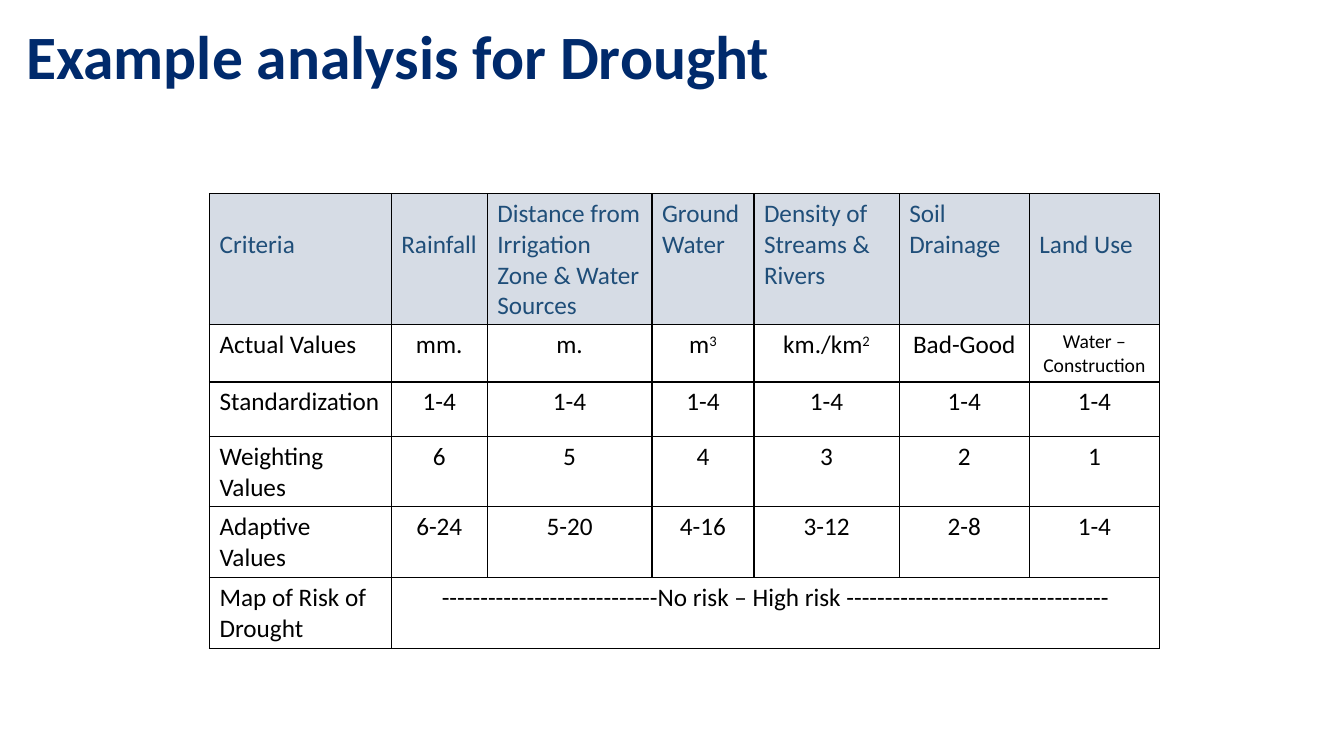
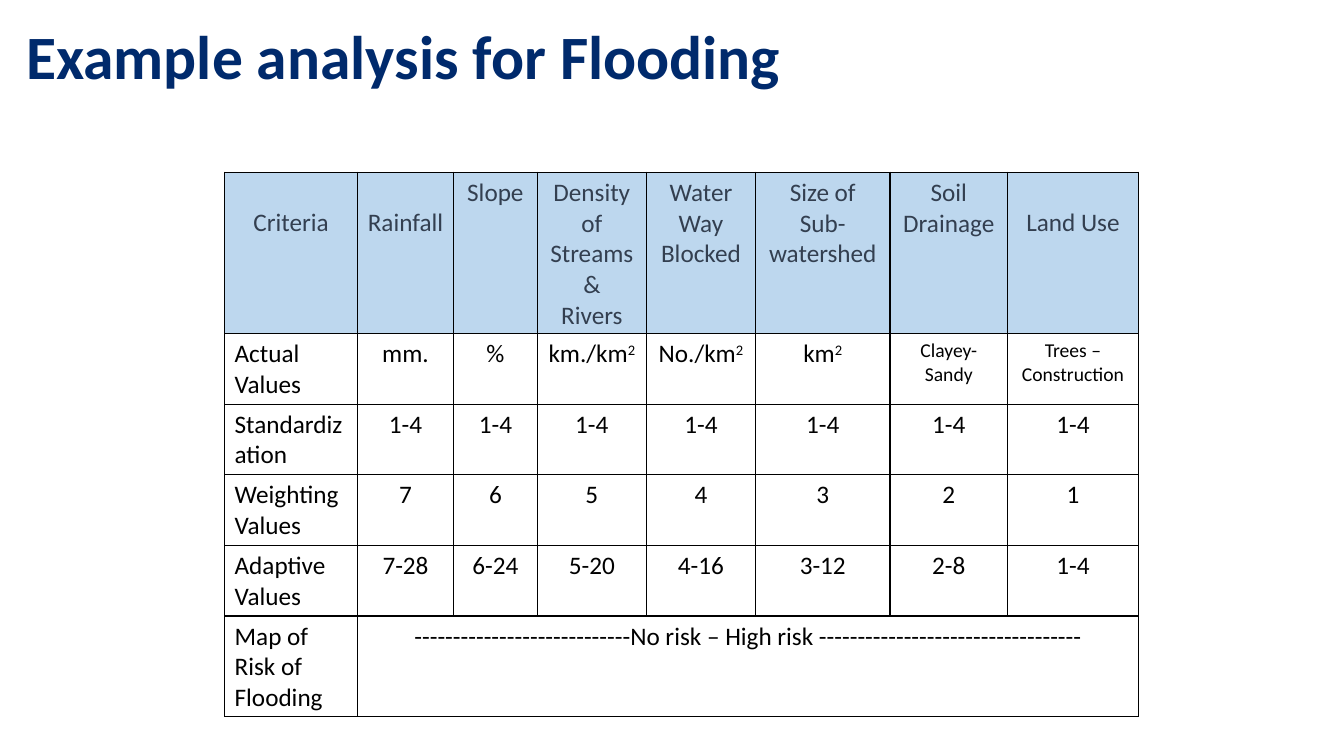
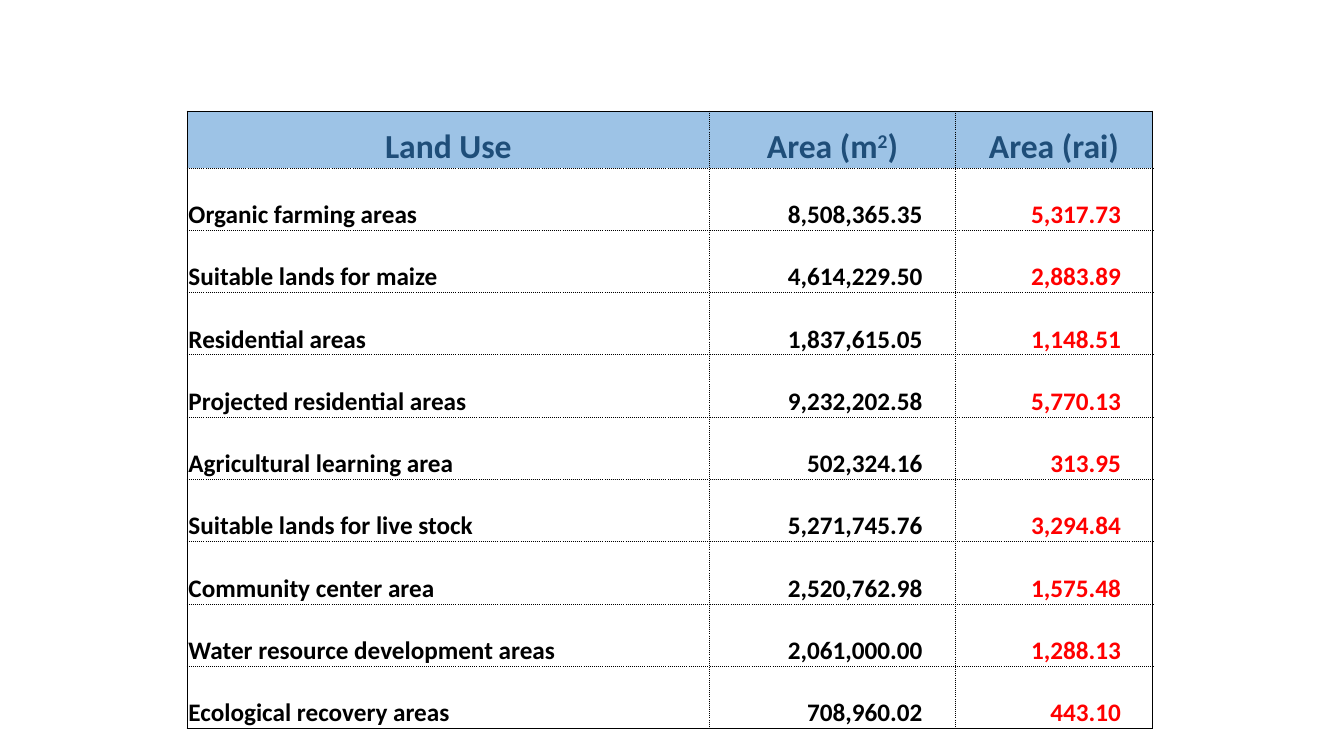
import pptx
import pptx.dml.color
import pptx.enum.text
import pptx.oxml
import pptx.oxml.ns
import pptx.util
from pptx.util import Cm

LEFT = pptx.enum.text.PP_ALIGN.LEFT
CENTER = pptx.enum.text.PP_ALIGN.CENTER
RIGHT = pptx.enum.text.PP_ALIGN.RIGHT
MIDDLE = pptx.enum.text.MSO_ANCHOR.MIDDLE
BOTTOM = pptx.enum.text.MSO_ANCHOR.BOTTOM

FONT = "Calibri"
NAVY, BLUE, SLATE = "002A6C", "1F4E79", "333F50"
BLACK, RED = "000000", "FF0000"
ONE_LINE_DOWN = Cm(0.9)
SOLID, DOTTED = (1, "solid"), (0.5, "dot")
RISK_SCALE = "-" * 28 + "No risk – High risk " + "-" * 34


def color(value):
    return pptx.dml.color.RGBColor.from_string(value)


def set_values(target, values):
    for name, value in values.items():
        setattr(target, name, value)


class Deck:
    def __init__(self):
        self.presentation = pptx.Presentation()
        self.presentation.slide_width = Cm(33.87)
        self.presentation.slide_height = Cm(19.05)
        self.slide = None

    def add_slide(self):
        self.slide = self.presentation.slides.add_slide(self.presentation.slide_layouts[6])

    def add_text(self, text_frame, text, size, text_color, bold=False, align=LEFT, spacing=None):
        """Add one paragraph a line; the character after ^ is raised."""
        for index, line in enumerate(text.split("\n")):
            paragraph = text_frame.paragraphs[0] if index == 0 else text_frame.add_paragraph()
            set_values(paragraph, {"alignment": align, "line_spacing": spacing})
            base, _, rest = line.partition("^")
            for part, raised in ((base, False), (rest[:1], True), (rest[1:], False)):
                if not part:
                    continue
                run = paragraph.add_run()
                run.text = part
                set_values(run.font, {"name": FONT, "size": pptx.util.Pt(size), "bold": bold})
                run.font.color.rgb = color(text_color)
                if raised:
                    run._r.get_or_add_rPr().set("baseline", "30000")

    def title(self, text):
        text_frame = self.slide.shapes.add_textbox(Cm(0.41), 0, Cm(32.99), Cm(3)).text_frame
        set_values(text_frame, {"word_wrap": True, "vertical_anchor": MIDDLE})
        self.add_text(text_frame, text, 44, NAVY, bold=True, spacing=0.9)

    def border(self, cell, side, line):
        width, dash = line
        cell._tc.get_or_add_tcPr().append(pptx.oxml.parse_xml(
            f'<a:ln{side} {pptx.oxml.ns.nsdecls("a")} w="{pptx.util.Pt(width)}">'
            f'<a:solidFill><a:srgbClr val="{BLACK}"/></a:solidFill>'
            f'<a:prstDash val="{dash}"/></a:ln{side}>'))

    def table(self, left, top, widths, heights, inner, header_fill):
        """Add an empty table with a solid frame and the given inner lines."""
        row_count, column_count = len(heights), len(widths)
        table = self.slide.shapes.add_table(
            row_count, column_count, Cm(left), Cm(top), Cm(sum(widths)), Cm(sum(heights))).table
        set_values(table, {"first_row": False, "horz_banding": False})
        for column, width in zip(table.columns, widths):
            column.width = Cm(width)
        for row, height in zip(table.rows, heights):
            row.height = Cm(height)
        for r in range(row_count):
            for c in range(column_count):
                cell = table.cell(r, c)
                edges = {"L": c == 0, "R": c == column_count - 1,
                         "T": r == 0, "B": r == row_count - 1}
                for side, outer in edges.items():
                    self.border(cell, side, SOLID if outer else inner)
                if r == 0:
                    cell.fill.solid()
                    cell.fill.fore_color.rgb = color(header_fill)
                else:
                    cell.fill.background()
        return table

    def criteria_table(self, left, top, widths, header, rows, hazard,
                       header_fill, header_color, header_align):
        table = self.table(left, top, widths, [2.74] + [1.37] * 5, SOLID, header_fill)
        for cell, text in zip(table.rows[0].cells, header):
            if text in ("Criteria", "Rainfall", "Land Use"):
                cell.margin_top = ONE_LINE_DOWN
            self.add_text(cell.text_frame, text, 18, header_color, align=header_align)
        last = len(rows) + 1
        table.cell(last, 1).merge(table.cell(last, len(widths) - 1))
        rows = rows + [("Map of Risk of " + hazard, RISK_SCALE)]
        for r, row in enumerate(rows, 1):
            for c, text in enumerate(row):
                small = text in ("Water – Construction", "Trees – Construction", "Clayey-Sandy")
                self.add_text(table.cell(r, c).text_frame, text, 14 if small else 18, BLACK,
                              align=CENTER if c else LEFT)

    def area_table(self, left, top, widths, header, rows):
        table = self.table(left, top, widths, [1.43] + [1.57] * len(rows), DOTTED, "9DC3E6")
        columns = [(LEFT, BLACK, 0.03), (RIGHT, BLACK, 0.83), (RIGHT, RED, 0.79)]
        for r, row in enumerate([header] + rows):
            for c, (text, (align, text_color, margin)) in enumerate(zip(row, columns)):
                size = 18
                if r == 0:
                    size, align, text_color, margin = 24, CENTER, BLUE, 0.03
                cell = table.cell(r, c)
                set_values(cell, {"vertical_anchor": BOTTOM, "margin_left": Cm(0.03),
                                  "margin_top": Cm(0.03), "margin_bottom": 0,
                                  "margin_right": Cm(margin)})
                self.add_text(cell.text_frame, text, size, text_color, bold=True, align=align)


def criteria_rows(units, highest_weight):
    """Weights fall by one a column; adaptive values are weight times 1 to 4."""
    weights = range(highest_weight, 0, -1)
    return [("Actual Values", *units),
            ("Standardization", *["1-4"] * len(units)),
            ("Weighting Values", *[str(weight) for weight in weights]),
            ("Adaptive Values", *[f"{weight}-{weight * 4}" for weight in weights])]


def main():
    deck = Deck()

    deck.add_slide()
    deck.title("Example analysis for Drought")
    deck.criteria_table(
        5.28, 4.88, [4.58, 2.42, 4.15, 2.57, 3.66, 3.28, 3.28],
        ["Criteria", "Rainfall", "Distance from Irrigation Zone & Water Sources",
         "Ground Water", "Density of Streams &\nRivers", "Soil Drainage", "Land Use"],
        criteria_rows(["mm.", "m.", "m^3", "km./km^2", "Bad-Good", "Water – Construction"], 6),
        "Drought", "D6DCE5", BLUE, LEFT)

    deck.add_slide()
    deck.title("Example analysis for Flooding")
    deck.criteria_table(
        5.66, 4.34, [3.35, 2.42, 2.11, 2.75, 2.75, 3.39, 2.96, 3.3],
        ["Criteria", "Rainfall", "Slope", "Density of Streams &\nRivers",
         "Water Way\nBlocked", "Size of Sub-watershed", "Soil Drainage", "Land Use"],
        criteria_rows(["mm.", "%", "km./km^2", "No./km^2", "km^2", "Clayey-Sandy",
                       "Trees – Construction"], 7),
        "Flooding", "BDD7EE", SLATE, CENTER)

    deck.add_slide()
    deck.area_table(
        4.72, 2.8, [13.16, 6.2, 4.96], ("Land Use", "Area (m^2)", "Area (rai)"),
        [("Organic farming areas", "8,508,365.35", "5,317.73"),
         ("Suitable lands for maize", "4,614,229.50", "2,883.89"),
         ("Residential areas", "1,837,615.05", "1,148.51"),
         ("Projected residential areas", "9,232,202.58", "5,770.13"),
         ("Agricultural learning area", "502,324.16", "313.95"),
         ("Suitable lands for live stock", "5,271,745.76", "3,294.84"),
         ("Community center area", "2,520,762.98", "1,575.48"),
         ("Water resource development areas", "2,061,000.00", "1,288.13"),
         ("Ecological recovery areas", "708,960.02", "443.10")])

    deck.presentation.save("out.pptx")


if __name__ == "__main__":
    main()
